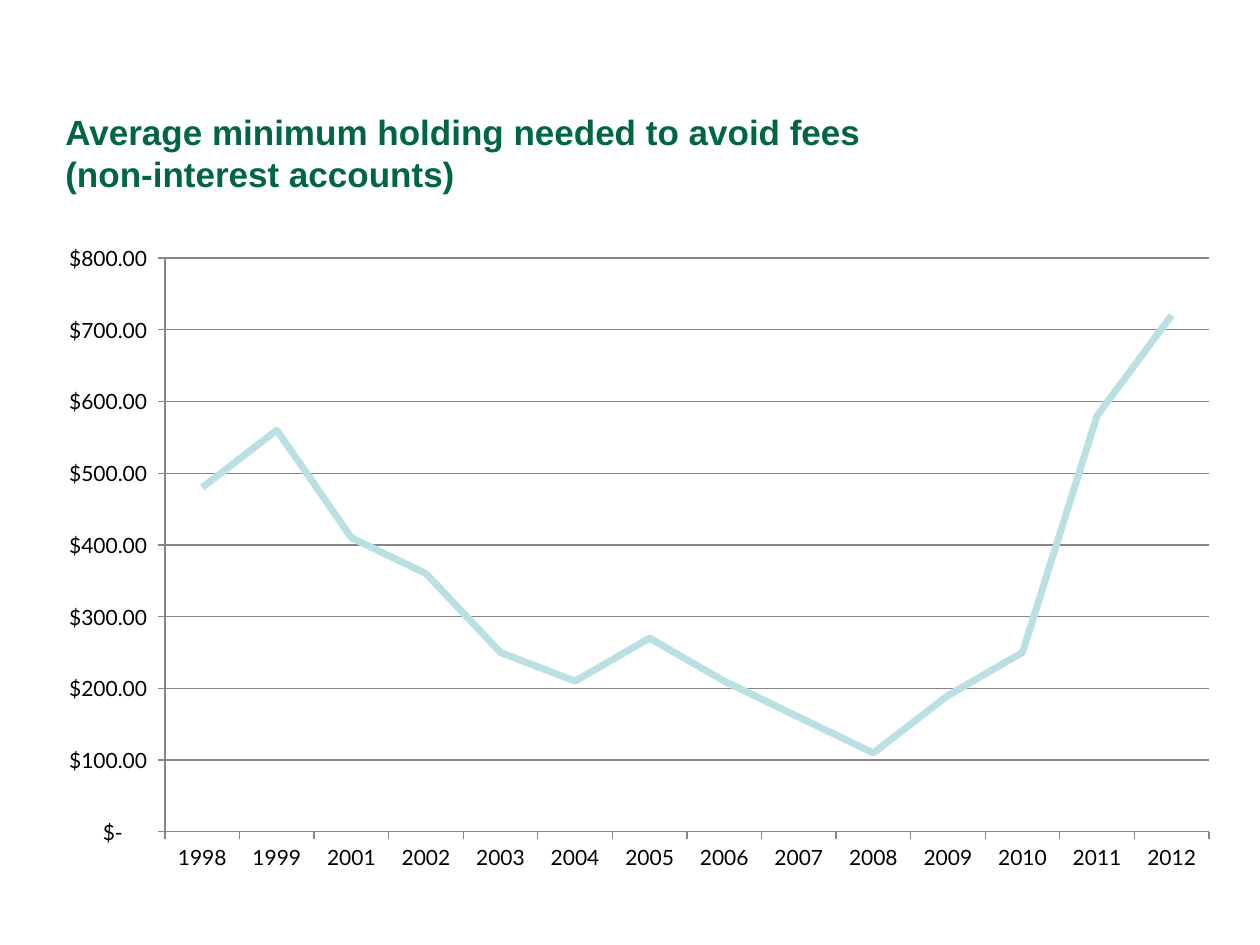
from lxml.etree import SubElement
from pptx import Presentation
from pptx.chart.data import CategoryChartData
from pptx.dml.color import RGBColor
from pptx.enum.chart import XL_CHART_TYPE, XL_TICK_MARK
from pptx.enum.text import MSO_ANCHOR
from pptx.oxml.ns import qn
from pptx.util import Pt

PX = 914400 // 126
GREEN = RGBColor(0x00, 0x66, 0x42)
PALE_TEAL = RGBColor(0xBB, 0xE0, 0xE3)
GRAY = RGBColor(0x86, 0x86, 0x86)
BLACK = RGBColor(0x00, 0x00, 0x00)

HOLDINGS = {
    "1998": 480, "1999": 560, "2001": 410, "2002": 360, "2003": 250,
    "2004": 210, "2005": 270, "2006": 210, "2007": 160, "2008": 110,
    "2009": 190, "2010": 250, "2011": 580, "2012": 720,
}
DOLLARS = '_("$"* #,##0.00_);_("$"* \\(#,##0.00\\);_("$"* "-"??_);_(@_)'

deck = Presentation()
deck.slide_width, deck.slide_height = 1260 * PX, 945 * PX
page = deck.slides.add_slide(deck.slide_layouts[6])

# Title
box = page.shapes.add_textbox(53 * PX, 79 * PX, 1071 * PX, 147 * PX)
frame = box.text_frame
frame.word_wrap = True
frame.vertical_anchor = MSO_ANCHOR.MIDDLE
para = frame.paragraphs[0]
para.text = "Average minimum holding needed to avoid fees \v(non-interest accounts)"
for span in para.runs:
    for name, value in {"name": "Arial", "size": Pt(20), "bold": True}.items():
        setattr(span.font, name, value)
    span.font.color.rgb = GREEN

# Line chart
left, top, width, height = 40, 232, 1193, 650
data = CategoryChartData()
data.categories = list(HOLDINGS)
data.add_series("Series 1", list(HOLDINGS.values()))
chart = page.shapes.add_chart(
    XL_CHART_TYPE.LINE, left * PX, top * PX, width * PX, height * PX, data
).chart
chart.has_legend = False
chart.has_title = False
chart.font.name = "Lato"
chart.font.size = Pt(12)
chart.font.color.rgb = BLACK
chart.plots[0].vary_by_categories = False

series = chart.plots[0].series[0]
series.smooth = False
series.format.line.color.rgb = PALE_TEAL
series.format.line.width = Pt(4)

# Axes
value_axis, year_axis = chart.value_axis, chart.category_axis
for name, value in {
    "minimum_scale": 0,
    "maximum_scale": 800,
    "major_unit": 100,
    "has_major_gridlines": True,
}.items():
    setattr(value_axis, name, value)
value_axis.tick_labels.number_format = DOLLARS
value_axis.tick_labels.number_format_is_linked = False
for axis in (value_axis, year_axis):
    axis.major_tick_mark = XL_TICK_MARK.OUTSIDE
    axis.minor_tick_mark = XL_TICK_MARK.NONE
for part in (value_axis, year_axis, value_axis.major_gridlines):
    part.format.line.color.rgb = GRAY
    part.format.line.width = Pt(0.75)

# Fixed inner plot area
plot_area = chart.plots[0]._element.getparent()
layout = plot_area.find(qn("c:layout"))
if layout is None:
    layout = SubElement(plot_area, qn("c:layout"))
    plot_area.insert(0, layout)
manual = SubElement(layout, qn("c:manualLayout"))
for tag, value in {
    "layoutTarget": "inner",
    "xMode": "edge",
    "yMode": "edge",
    "x": (165 - left) / width,
    "y": (258 - top) / height,
    "w": 1044 / width,
    "h": 574 / height,
}.items():
    SubElement(manual, qn("c:" + tag)).set("val", str(value))

deck.save("out.pptx")
